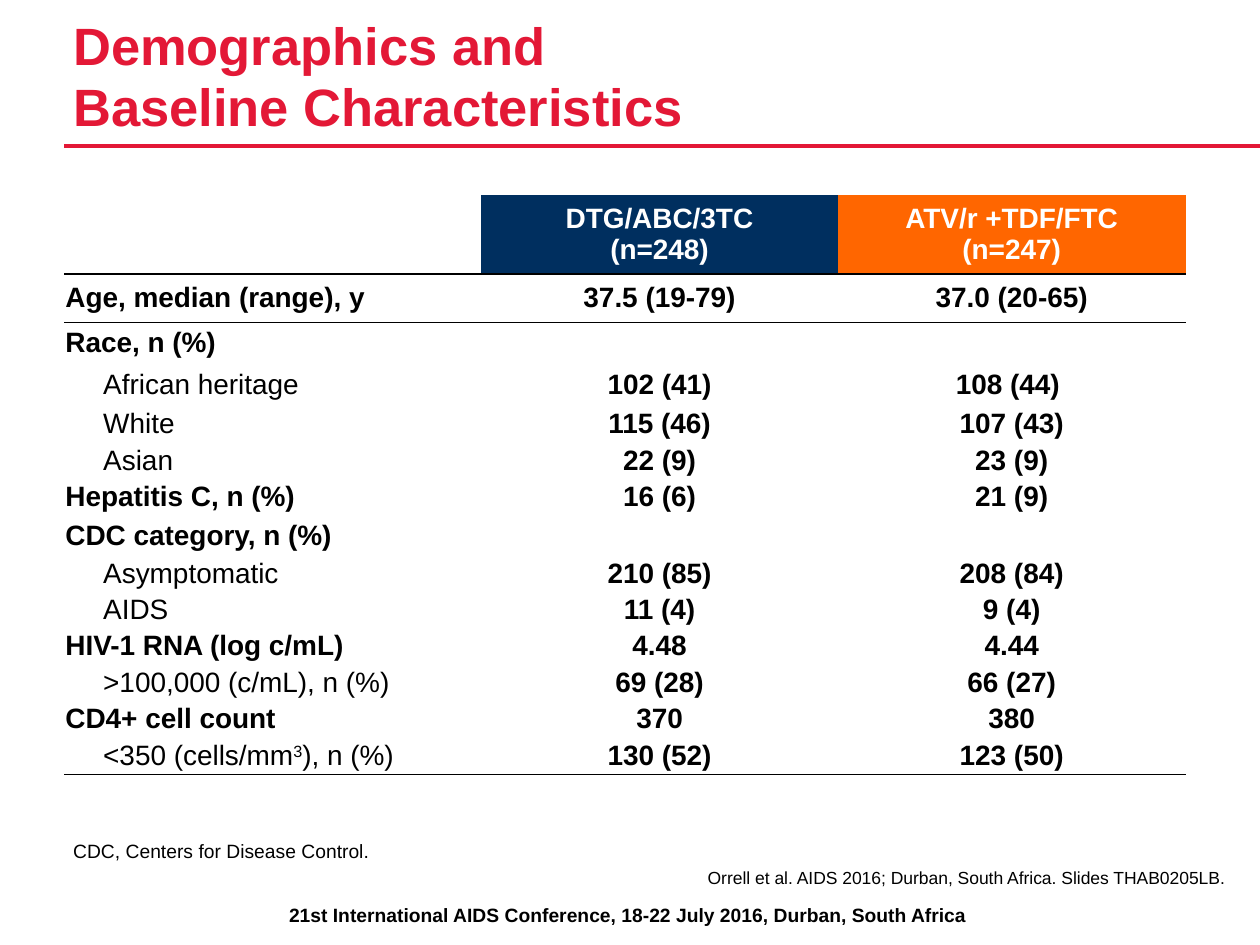
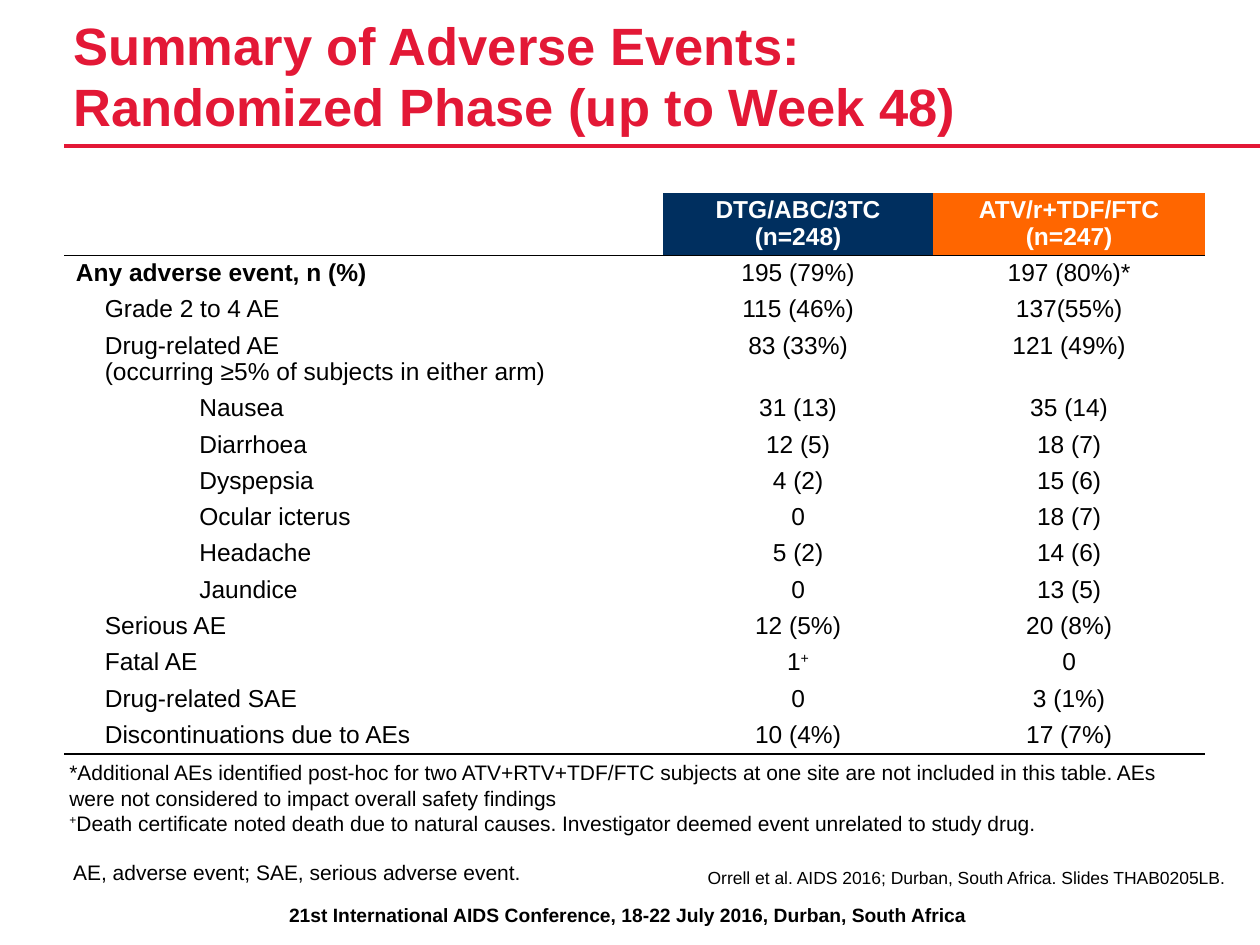
from lxml.etree import SubElement
from pptx import Presentation
from pptx.dml.color import RGBColor
from pptx.enum.shapes import MSO_CONNECTOR
from pptx.enum.text import MSO_ANCHOR, PP_ALIGN
from pptx.oxml import parse_xml
from pptx.oxml.ns import nsdecls, qn
from pptx.util import Pt

RED, NAVY, ORANGE = "E31836", "002F5F", "FF6600"
BLACK, WHITE = "000000", "FFFFFF"
LEFT, CENTER, RIGHT = PP_ALIGN.LEFT, PP_ALIGN.CENTER, PP_ALIGN.RIGHT
NO_STYLE = "{2D5ABB26-0587-4C30-8999-92F81FD0307C}"
CONFERENCE = "21st International AIDS Conference, 18-22 July 2016, Durban, South Africa"
SOURCE = "Orrell et al. AIDS 2016; Durban, South Africa. Slides THAB0205LB."


def rgb(value):
    return RGBColor.from_string(value)


def write(tf, lines, size, color=BLACK, bold=False, align=LEFT, spacing=None, indent=0):
    tf.word_wrap = True
    for i, line in enumerate(lines):
        p = tf.paragraphs[0] if i == 0 else tf.add_paragraph()
        p.alignment = align
        if spacing:
            p.line_spacing = Pt(spacing)
        if indent:
            p._p.get_or_add_pPr().set("marL", str(Pt(indent)))
        for j, part in enumerate(line.split("^")):
            r = p.add_run()
            r.text = part
            r.font.name, r.font.size, r.font.bold = "Arial", Pt(size), bold
            r.font.color.rgb = rgb(color)
            if j % 2:
                r._r.get_or_add_rPr().set("baseline", "30000")


demographics = [
    (0, "Age, median (range), y", "37.5 (19-79)", "37.0 (20-65)"),
    (0, "Race, n (%)", "", ""),
    (21.6, "African heritage", "102 (41)", "108 (44) "),
    (21.6, "White", "115 (46)", "107 (43)"),
    (21.6, "Asian", "22 (9)", "23 (9)"),
    (0, "Hepatitis C, n (%)", "16 (6)", "21 (9)"),
    (0, "CDC category, n (%)", "", ""),
    (21.6, "Asymptomatic", "210 (85)", "208 (84)"),
    (21.6, "AIDS", "11 (4)", "9 (4)"),
    (0, "HIV-1 RNA (log c/mL)", "4.48", "4.44"),
    (21.6, ">100,000 (c/mL), n (%)", "69 (28)", "66 (27)"),
    (0, "CD4+ cell count", "370", "380"),
    (21.6, "<350 (cells/mm^3^), n (%)", "130 (52)", "123 (50)"),
]
adverse_events = [
    (6, "Any adverse event, n (%)", "195 (79%)", "197 (80%)*"),
    (22.5, "Grade 2 to 4 AE", "115 (46%)", "137(55%)"),
    (22.5, "Drug-related AE\n(occurring ≥5% of subjects in either arm)", "83 (33%)", "121 (49%)"),
    (76.5, "Nausea", "31 (13)", "35 (14)"),
    (76.5, "Diarrhoea", "12 (5)", "18 (7)"),
    (76.5, "Dyspepsia", "4 (2)", "15 (6)"),
    (76.5, "Ocular icterus", "0", "18 (7)"),
    (76.5, "Headache", "5 (2)", "14 (6)"),
    (76.5, "Jaundice", "0", "13 (5)"),
    (22.5, "Serious AE", "12 (5%)", "20 (8%)"),
    (22.5, "Fatal AE", "1^+^", "0"),
    (22.5, "Drug-related SAE", "0", "3 (1%)"),
    (22.5, "Discontinuations due to AEs", "10 (4%)", "17 (7%)"),
]
slides = [
    dict(
        title=["Demographics and", "Baseline Characteristics"],
        arms=("DTG/ABC/3TC\n(n=248)", "ATV/r +TDF/FTC\n(n=247)"),
        rows=demographics, top=111.5, columns=(238.3, 203.8, 198.7),
        heights=[45, 28, 21, 24.5] + [20.9] * 4 + [19.4, 19] + [20.9] * 4,
        size=16, spacing=None, inset=0.7, anchor=MSO_ANCHOR.MIDDLE, bold_values=True,
        rules={0: 1, 1: 0.5, 13: 0.5},
        notes=[(41.8, 479.5, 658, 14.4, 11, ["CDC, Centers for Disease Control."])],
    ),
    dict(
        title=["Summary of Adverse Events:", "Randomized Phase (up to Week 48)"],
        arms=("DTG/ABC/3TC\n(n=248)", "ATV/r+TDF/FTC\n(n=247)"),
        rows=adverse_events, top=110.2, columns=(342.2, 154.3, 155.5),
        heights=[35.8, 20.76, 20.76, 35.8] + [20.76] * 10,
        size=14, spacing=15, inset=2.88, anchor=MSO_ANCHOR.TOP, bold_values=False,
        rules={0: 1, 13: 1},
        notes=[
            (39.6, 434.2, 646.6, 58.3, 12, [
                "*Additional AEs identified post-hoc for two ATV+RTV+TDF/FTC subjects at one site "
                "are not included in this table. AEs were not considered to impact overall safety findings",
                "^+^Death certificate noted death due to natural causes. "
                "Investigator deemed event unrelated to study drug."]),
            (41.8, 491, 658, 28.8, 12, ["AE, adverse event; SAE, serious adverse event."]),
        ],
    ),
]

prs = Presentation()
prs.slide_width, prs.slide_height = Pt(720), Pt(540)

for page in slides:
    s = prs.slides.add_slide(prs.slide_layouts[6])

    line = s.shapes.add_connector(MSO_CONNECTOR.STRAIGHT, Pt(36.7), Pt(83.5), Pt(720), Pt(83.5))
    line.line.color.rgb = rgb(RED)
    line.line.width = Pt(2)
    SubElement(line._element.spPr, qn("a:effectLst"))

    boxes = [
        (41.8, 12.2, 594, 66.2, page["title"],
         dict(size=30, color=RED, bold=True, spacing=35), MSO_ANCHOR.BOTTOM),
        (41.8, 495.4, 658, 14.4, [SOURCE], dict(size=10, align=RIGHT), MSO_ANCHOR.TOP),
        (4.3, 516.3, 709.2, 14, [CONFERENCE],
         dict(size=11, bold=True, align=CENTER), MSO_ANCHOR.TOP),
    ]
    for x, y, w, h, size, lines in page["notes"]:
        boxes.append((x, y, w, h, lines, dict(size=size), MSO_ANCHOR.TOP))
    for x, y, w, h, lines, style, anchor in boxes:
        tf = s.shapes.add_textbox(Pt(x), Pt(y), Pt(w), Pt(h)).text_frame
        tf.margin_left = tf.margin_right = tf.margin_top = tf.margin_bottom = 0
        tf.vertical_anchor = anchor
        write(tf, lines, **style)

    rows = [(0, "", *page["arms"])] + page["rows"]
    columns, heights = page["columns"], page["heights"]
    table = s.shapes.add_table(len(rows), 3, Pt(36.7), Pt(page["top"]),
                               Pt(sum(columns)), Pt(sum(heights))).table
    table.horz_banding = False
    table._tbl.tblPr.find(qn("a:tableStyleId")).text = NO_STYLE
    for column, width in zip(table.columns, columns):
        column.width = Pt(width)

    for i, (indent, *texts) in enumerate(rows):
        table.rows[i].height = Pt(heights[i])
        for j, text in enumerate(texts):
            cell = table.cell(i, j)
            cell.margin_left = cell.margin_right = Pt(0.7)
            cell.margin_top = cell.margin_bottom = Pt(page["inset"])
            cell.vertical_anchor = page["anchor"]
            if i == 0 and j:
                cell.fill.solid()
                cell.fill.fore_color.rgb = rgb((NAVY, ORANGE)[j - 1])
            else:
                cell.fill.background()
            write(cell.text_frame, text.split("\n"), page["size"],
                  color=BLACK if i else WHITE,
                  bold=i == 0 or (page["bold_values"] if j else indent < 10),
                  align=CENTER if j else LEFT,
                  spacing=page["spacing"], indent=0 if j else indent)
            if i in page["rules"]:
                width = Pt(page["rules"][i])
                cell._tc.get_or_add_tcPr().insert(0, parse_xml(
                    f'<a:lnB {nsdecls("a")} w="{width}"><a:solidFill>'
                    f'<a:srgbClr val="{BLACK}"/></a:solidFill></a:lnB>'))

prs.save("out.pptx")
